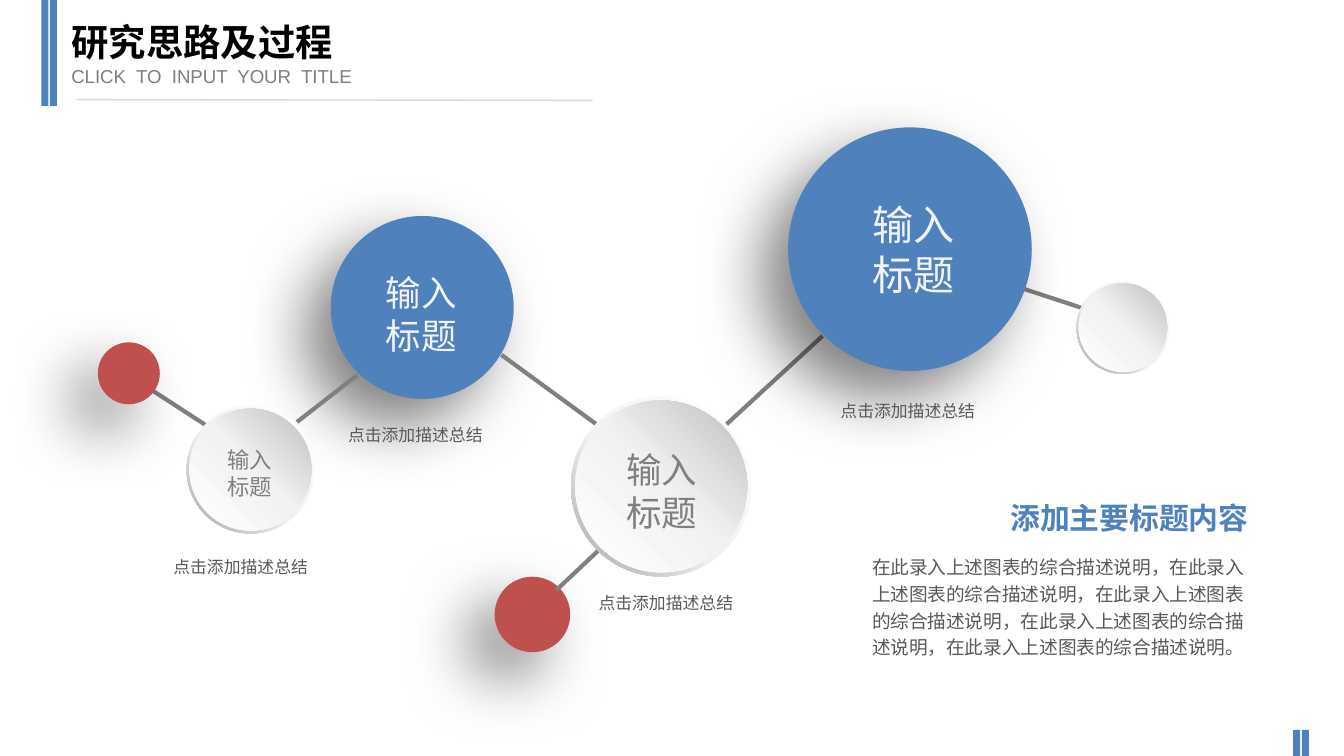
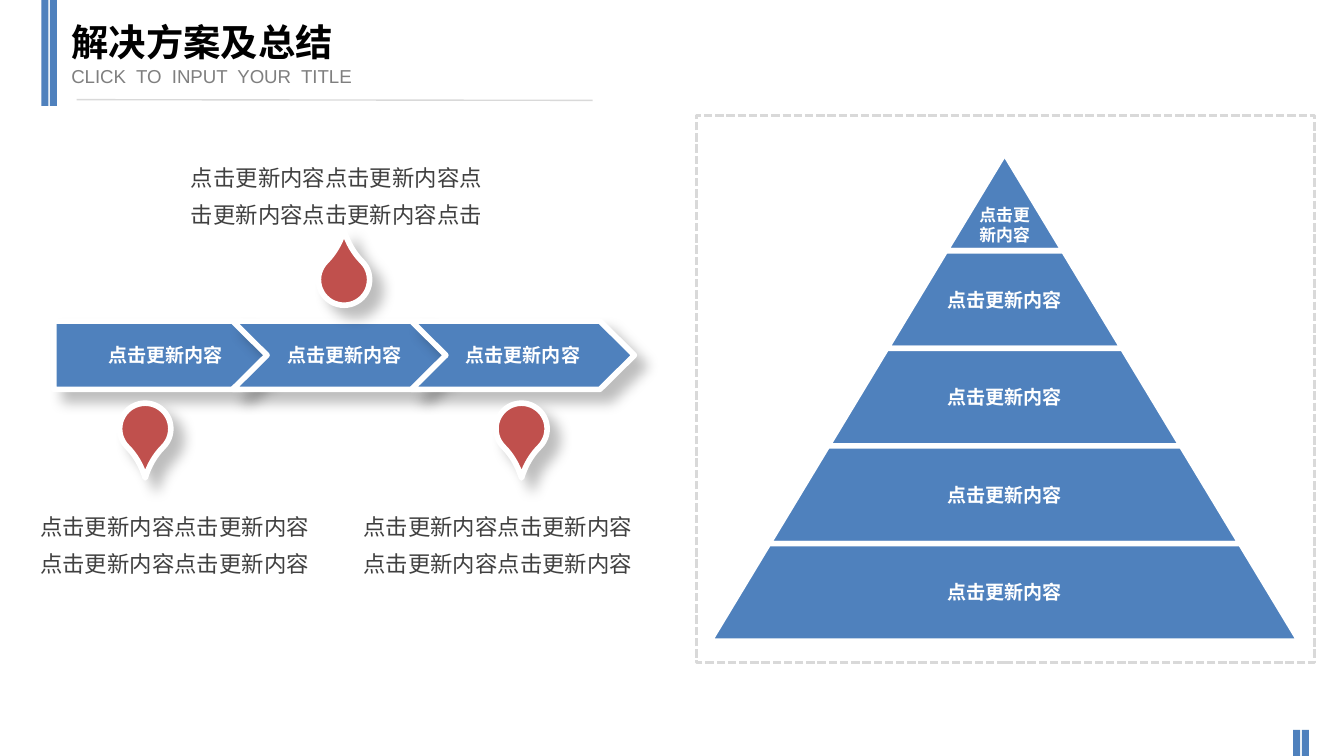
from dataclasses import dataclass
from lxml.etree import SubElement
from pptx import Presentation
from pptx.dml.color import RGBColor
from pptx.enum.dml import MSO_LINE
from pptx.enum.shapes import MSO_CONNECTOR, MSO_SHAPE
from pptx.enum.text import MSO_ANCHOR, PP_ALIGN
from pptx.oxml import parse_xml
from pptx.oxml.ns import nsdecls, qn
from pptx.util import Pt


@dataclass(frozen=True)
class Theme:
    blue: str = "4F81BD"
    red: str = "C0504D"
    black: str = "000000"
    white: str = "FFFFFF"
    pale: str = "F2F2F2"
    rule: str = "D9D9D9"
    link: str = "808080"
    sub: str = "7F7F7F"
    note: str = "595959"
    dark: str = "404040"
    latin: str = "Arial"
    han: str = "Noto Sans CJK SC"
    title: float = 20
    head: float = 16
    body: float = 12
    label: float = 10.2
    text: float = 10
    small: float = 9


T = Theme()
DEEP = (50, 35, 20, 135)  # opacity, blur, distance, angle
SOFT = (25, 7, 8, 45)
RIM = ((0, T.white), (55, T.pale), (100, "A6A6A6")), 135
FACE = ((0, T.white), (51, T.pale), (100, "BFBFBF")), 315


def finish(shape, fill=None, edge=None, width=3, shadow=None):
    """Set fill (colour, or stops and angle), outline and shadow."""
    shape.shadow.inherit = False
    props = shape.element.spPr
    if fill is None:
        shape.fill.background()
    elif isinstance(fill, str):
        shape.fill.solid()
        shape.fill.fore_color.rgb = RGBColor.from_string(fill)
    else:
        stops = "".join(f'<a:gs pos="{at * 1000}"><a:srgbClr val="{tint}"/></a:gs>'
                        for at, tint in fill[0])
        props.insert(2, parse_xml(
            f'<a:gradFill {nsdecls("a")} rotWithShape="1"><a:gsLst>{stops}</a:gsLst>'
            f'<a:lin ang="{fill[1] * 60000}" scaled="0"/></a:gradFill>'))
    if edge:
        shape.line.color.rgb = RGBColor.from_string(edge)
        shape.line.width = Pt(width)
    else:
        shape.line.fill.background()
    if shadow:
        alpha, blur, dist, turn = shadow
        props.find(qn("a:effectLst")).append(parse_xml(
            f'<a:outerShdw {nsdecls("a")} blurRad="{Pt(blur)}" dist="{Pt(dist)}" '
            f'dir="{turn * 60000}" algn="ctr" rotWithShape="0"><a:srgbClr val="{T.black}">'
            f'<a:alpha val="{alpha * 1000}"/></a:srgbClr></a:outerShdw>'))


def write(frame, text, size, tint, bold=False, align=PP_ALIGN.CENTER, lead=1.2,
          face=T.latin, anchor=MSO_ANCHOR.TOP, pad=(5, 3), wrap=True):
    """Fill a text frame, one paragraph per line of text."""
    frame.text = text
    frame.word_wrap = wrap
    frame.vertical_anchor = anchor
    frame.margin_left = frame.margin_right = Pt(pad[0])
    frame.margin_top = frame.margin_bottom = Pt(pad[1])
    for par in frame.paragraphs:
        par.alignment = align
        par.line_spacing = Pt(round(size * lead, 1))
        par.space_before = Pt(0)
        font = par.font
        font.size, font.bold, font.name = Pt(size), bold, face
        font.color.rgb = RGBColor.from_string(tint)
        props = par._p.pPr.find(qn("a:defRPr"))
        SubElement(props, qn("a:ea")).set("typeface", T.han)


deck = Presentation()
deck.slide_width, deck.slide_height = Pt(720), Pt(405)
layout = deck.slide_layouts[2]

# Titles
slides = []
for name in ("研究思路及过程", "解决方案及总结"):
    slide = deck.slides.add_slide(layout)
    heads = ((slide.shapes.title, name, 4.3, 291, 36, T.title, T.black, True),
             (slide.placeholders[1], "CLICK  TO  INPUT  YOUR  TITLE",
              31, 227, 19.4, T.text, T.sub, False))
    for box, text, y, w, h, size, tint, bold in heads:
        box.left, box.top, box.width, box.height = Pt(31), Pt(y), Pt(w), Pt(h)
        write(box.text_frame, text, size, tint, bold, PP_ALIGN.LEFT,
              anchor=MSO_ANCHOR.MIDDLE, pad=(7.2, 3.6))
    slides.append(slide)
flow, plan = (slide.shapes for slide in slides)

# Shared bars and title rule, kept on the layout
for x, y, h in ((22.2, 0, 56.8), (692.8, 391, 14)):
    for step in range(2):
        bar = flow.add_shape(MSO_SHAPE.RECTANGLE, Pt(x + 4.6 * step), Pt(y), Pt(3.8), Pt(h))
        finish(bar, T.blue)
        layout.shapes.element.append(bar.element)
rule = flow.add_connector(MSO_CONNECTOR.STRAIGHT, Pt(41), Pt(53.4), Pt(317.5), Pt(53.8))
rule.line.color.rgb = RGBColor.from_string(T.rule)
rule.line.width = Pt(0.75)
SubElement(rule.element.spPr, qn("a:effectLst"))
layout.shapes.element.append(rule.element)

# Slide 1: links and circles, back layer first
layers = (
    (((544.3, 153.4, 588.2, 167.8), (387.4, 229, 440.6, 180)),
     ((487.5, 133.5, 130.5, T.blue), (285.2, 329.2, 40.5, T.red),
      (226.2, 164.7, 98, T.blue))),
    (((159.1, 226.1, 191.5, 200.9), (268.6, 190.1, 321.8, 229),
      (82.1, 209.5, 110.9, 228.2), (298.1, 316.1, 321.8, 293.8)),
     ((601.6, 175.5, 49.7, None), (354.2, 260.6, 96.5, None),
      (134.2, 251.6, 68.4, None), (69, 200, 33.2, T.red))),
)
for links, nodes in layers:
    for ends in links:
        link = flow.add_connector(MSO_CONNECTOR.STRAIGHT, *(Pt(v) for v in ends))
        link.line.color.rgb = RGBColor.from_string(T.link)
        link.line.width = Pt(2.25)
        SubElement(link.element.spPr, qn("a:effectLst"))
    for x, y, size, tint in nodes:
        ring = MSO_SHAPE.OVAL if tint else MSO_SHAPE.DONUT
        parts = ((ring, size, tint or RIM, DEEP if tint else None),
                 (MSO_SHAPE.OVAL, size * 0.955, tint or FACE, None))
        for kind, d, fill, shadow in parts:
            disc = flow.add_shape(kind, Pt(x - d / 2), Pt(y - d / 2), Pt(d), Pt(d))
            if kind == MSO_SHAPE.DONUT:
                disc.adjustments[0] = 0.049
            finish(disc, fill, shadow=shadow)

# Circle labels
for x, y, w, h, size, tint in (
        (460, 103, 59, 60.5, 22, T.pale), (328.3, 236.2, 52.6, 53.3, 19, T.link),
        (199.4, 141.1, 52.6, 53.3, 19, T.pale), (114.5, 235.4, 38.9, 36, 12, T.link)):
    box = flow.add_textbox(Pt(x), Pt(y), Pt(w), Pt(h))
    write(box.text_frame, "输入\n标题", size, tint, lead=1.22, face=T.han,
          pad=(7.2, 3.6), wrap=False)

# Captions under the circles
for x, y in ((75.2, 292.3), (168.8, 221.8), (303, 311.8), (432.6, 208.8)):
    box = flow.add_textbox(Pt(x), Pt(y), Pt(107.3), Pt(20.2))
    write(box.text_frame, "点击添加描述总结", T.small, T.note, lead=1.51, face=T.han)

# Summary
box = flow.add_textbox(Pt(492.5), Pt(264.2), Pt(182.9), Pt(26))
write(box.text_frame, "添加主要标题内容", T.head, T.blue, True, PP_ALIGN.RIGHT,
      face=T.han, pad=(6.5, 3.6))
box = flow.add_textbox(Pt(462.2), Pt(292.3), Pt(216), Pt(63.4))
write(box.text_frame, "，".join(["在此录入上述图表的综合描述说明"] * 5) + "。",
      T.text, T.note, align=PP_ALIGN.LEFT, lead=1.44, face=T.han)

# Slide 2: pyramid
mid, top, rise, run = 538.2, 82, 52.3, 31.6
for tier in range(5):
    y, half = top + rise * tier, run * tier
    path = plan.build_freeform(Pt(mid - half - run), Pt(y + rise), 1)
    path.add_line_segments([(Pt(mid - half), Pt(y)), (Pt(mid + half), Pt(y)),
                            (Pt(mid + half + run), Pt(y + rise))], close=True)
    block = path.convert_to_shape()
    finish(block, T.blue, T.white)
    if tier:
        write(block.text_frame, "点击更新内容", T.label, T.white, True,
              anchor=MSO_ANCHOR.MIDDLE)
    else:
        write(block.text_frame, "点击更\n新内容", T.small, T.white, True,
              anchor=MSO_ANCHOR.BOTTOM)

# Dashed frame
frame = plan.add_shape(MSO_SHAPE.RECTANGLE, Pt(373), Pt(62), Pt(331.2), Pt(293))
finish(frame, edge=T.rule, width=1.5)
frame.line.dash_style = MSO_LINE.SQUARE_DOT

# Arrow band
for step in range(3):
    x, y, w, h, nose = 28.8 + 95.8 * step, 172, 119.5, 36.6, 18.5
    path = plan.build_freeform(Pt(x), Pt(y), 1)
    spots = [(x + w - nose, y), (x + w, y + h / 2), (x + w - nose, y + h), (x, y + h)]
    if step:
        spots.append((x + nose, y + h / 2))
    path.add_line_segments([(Pt(a), Pt(b)) for a, b in spots], close=True)
    arrow = path.convert_to_shape()
    finish(arrow, T.blue, T.white, shadow=SOFT)
    write(arrow.text_frame, "点击更新内容", T.label, T.white, True,
          anchor=MSO_ANCHOR.MIDDLE)

# Pins
for x, y, turn in ((64.1, 216, 135), (265.7, 216, 135), (170.6, 136.1, 315)):
    pin = plan.add_shape(MSO_SHAPE.TEAR, Pt(x), Pt(y), Pt(27.4), Pt(27.4))
    pin.adjustments[0] = 1.358
    pin.rotation = turn
    finish(pin, T.red, T.white, shadow=SOFT)

# Pin notes
for x, y, w, tail in ((94.3, 79.2, 172, "点击"), (10.8, 266.4, 165.6, ""),
                      (187.2, 266.4, 159, "")):
    box = plan.add_textbox(Pt(x), Pt(y), Pt(w), Pt(46))
    write(box.text_frame, "点击更新内容" * 4 + tail, T.body, T.dark, lead=1.66)

deck.save("out.pptx")
